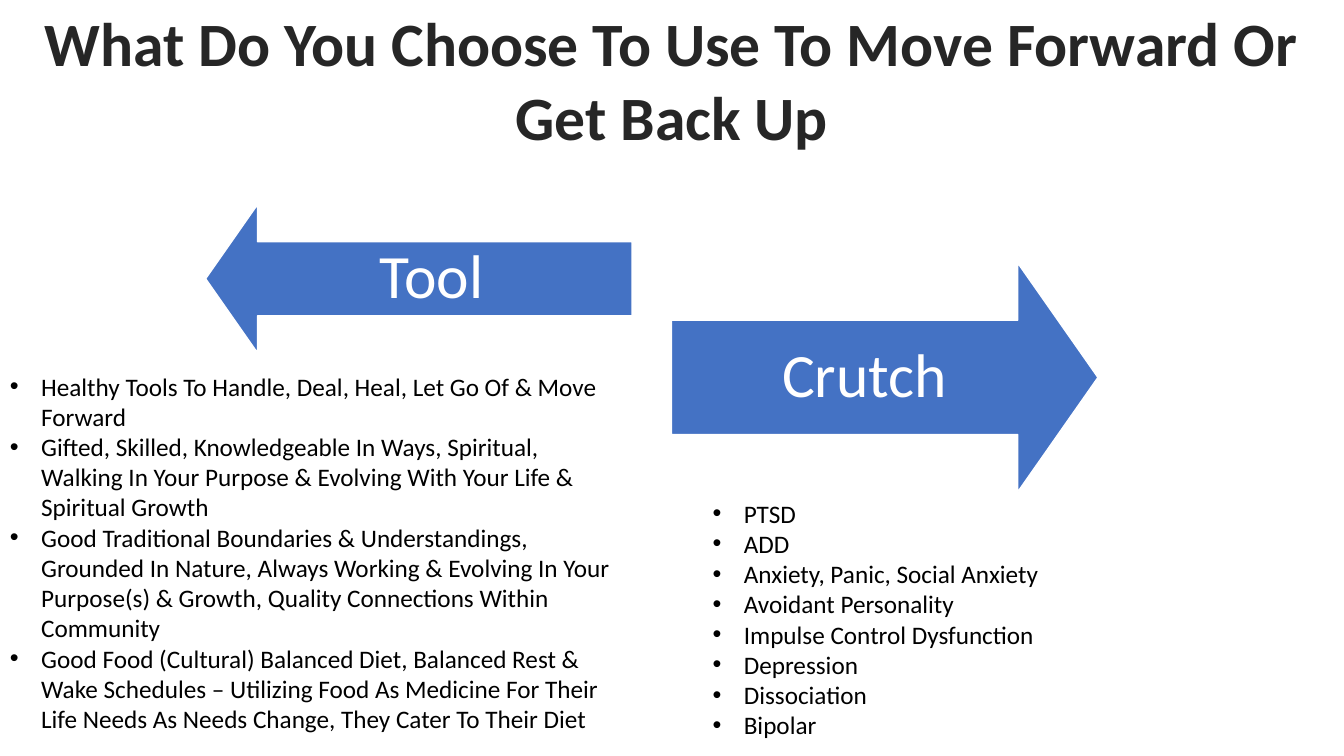
from pptx import Presentation
from pptx.dml.color import RGBColor
from pptx.enum.shapes import MSO_SHAPE
from pptx.enum.text import MSO_ANCHOR, PP_ALIGN
from pptx.oxml import parse_xml
from pptx.oxml.ns import nsdecls
from pptx.util import Inches, Pt

THEME = {
    "font": "Calibri",
    "heading": Pt(44),
    "body": Pt(18),
    "arrow": RGBColor(0x44, 0x72, 0xC4),
    "white": RGBColor(0xFF, 0xFF, 0xFF),
    "title": RGBColor(0x26, 0x26, 0x26),
    "black": RGBColor(0, 0, 0),
}
INDENT = Inches(0.31)

deck = Presentation()
deck.slide_width, deck.slide_height = Inches(13.33), Inches(7.5)
page = deck.slides.add_slide(deck.slide_layouts[6])


def place(left, top, width, height):
    """Turn percentages of the slide into lengths."""
    across, down = deck.slide_width / 100, deck.slide_height / 100
    return [round(v) for v in (left * across, top * down, width * across, height * down)]


def write(para, text, size, color, bold=False):
    span = para.add_run()
    span.text = text
    span.font.color.rgb = THEME[color]
    style = {"name": THEME["font"], "size": THEME[size], "bold": bold}
    for name, value in style.items():
        setattr(span.font, name, value)


# Arrows, sharing one width and head proportion
ARROW_WIDTH = 31.73
for label, kind, left, top, height in (
    ("Tool", MSO_SHAPE.LEFT_ARROW, 15.3, 27.07, 19.6),
    ("Crutch", MSO_SHAPE.RIGHT_ARROW, 49.96, 34.8, 30.27),
):
    arrow = page.shapes.add_shape(kind, *place(left, top, ARROW_WIDTH, height))
    arrow.adjustments[0], arrow.adjustments[1] = 0.5, 0.35
    arrow.shadow.inherit = False
    arrow.fill.solid()
    arrow.fill.fore_color.rgb = THEME["arrow"]
    arrow.line.color.rgb = THEME["white"]
    arrow.line.width = Pt(1)
    frame = arrow.text_frame
    layout = {"vertical_anchor": MSO_ANCHOR.MIDDLE, "word_wrap": True,
              "margin_left": Inches(0.34), "margin_right": Inches(0.34),
              "margin_top": 0, "margin_bottom": 0}
    for name, value in layout.items():
        setattr(frame, name, value)
    para = frame.paragraphs[0]
    para.alignment, para.line_spacing = PP_ALIGN.CENTER, 0.9
    write(para, label, "heading", "white")

# Title
box = page.shapes.add_textbox(*place(0, 0, 100, 21.07))
box.text_frame.word_wrap = True
para = box.text_frame.paragraphs[0]
para.alignment = PP_ALIGN.CENTER
write(para, "What Do You Choose To Use To Move Forward Or Get Back Up",
      "heading", "title", bold=True)

# Bulleted lists under the arrows
crutches = [
    "PTSD",
    "ADD",
    "Anxiety, Panic, Social Anxiety",
    "Avoidant Personality",
    "Impulse Control Dysfunction",
    "Depression",
    "Dissociation",
    "Bipolar",
]
tools = [
    "Healthy Tools To Handle, Deal, Heal, Let Go Of & Move Forward",
    "Gifted, Skilled, Knowledgeable In Ways, Spiritual, Walking In Your Purpose "
    "& Evolving With Your Life & Spiritual Growth",
    "Good Traditional Boundaries & Understandings, Grounded In Nature, Always Working "
    "& Evolving In Your Purpose(s) & Growth, Quality Connections Within Community",
    "Good Food (Cultural) Balanced Diet, Balanced Rest & Wake Schedules – Utilizing Food "
    "As Medicine For Their Life Needs As Needs Change, They Cater To Their Diet",
]
for items, area in (
    (crutches, (52.28, 65.2, 46.36, 41.73)),
    (tools, (0, 48.4, 47.33, 49.87)),
):
    box = page.shapes.add_textbox(*place(*area))
    frame = box.text_frame
    frame.word_wrap = True
    for number, item in enumerate(items):
        para = frame.add_paragraph() if number else frame.paragraphs[0]
        write(para, item, "body", "black")
        settings = para._p.get_or_add_pPr()
        settings.set("marL", str(INDENT))
        settings.set("indent", str(-INDENT))
        settings.append(parse_xml(f'<a:buFont {nsdecls("a")} typeface="Arial"/>'))
        settings.append(parse_xml(f'<a:buChar {nsdecls("a")} char="•"/>'))

deck.save("out.pptx")
